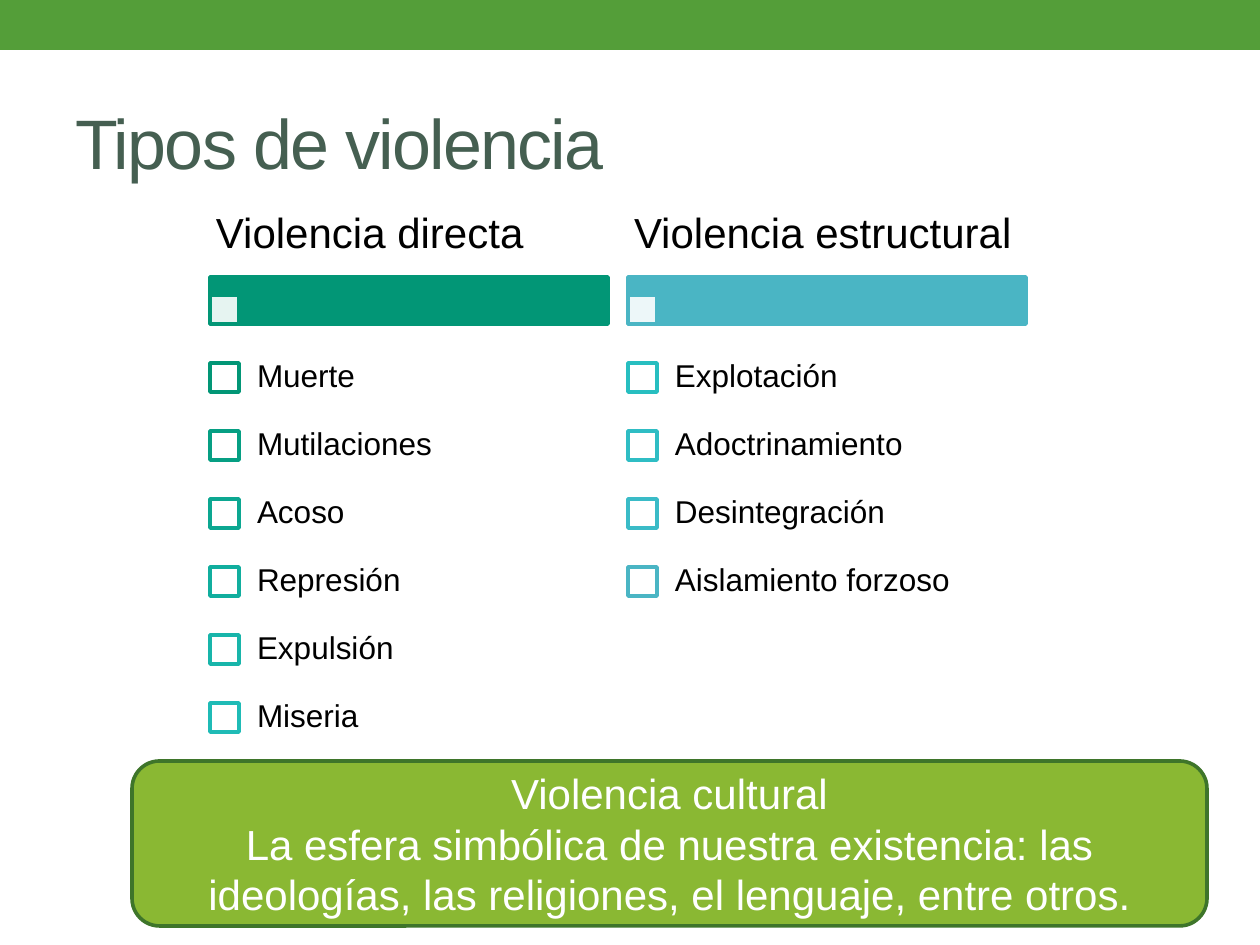
import pptx
import pptx.util
import pptx.dml.color
import pptx.enum.shapes
import pptx.enum.text
import pptx.oxml.ns
import lxml.etree

EMU_PER_PX = 914400 / 126
FONT = "Arial"
RECTANGLE = pptx.enum.shapes.MSO_SHAPE.RECTANGLE
ROUNDED = pptx.enum.shapes.MSO_SHAPE.ROUNDED_RECTANGLE
MIDDLE = pptx.enum.text.MSO_ANCHOR.MIDDLE
LEFT = pptx.enum.text.PP_ALIGN.LEFT
CENTER = pptx.enum.text.PP_ALIGN.CENTER

MARKER = 29
ROW_PITCH = 68

COLUMNS = [
    ("Violencia directa", "029676", [
        ("Muerte", "029676"),
        ("Mutilaciones", "069F83"),
        ("Acoso", "0CA791"),
        ("Represión", "11AE9E"),
        ("Expulsión", "18B5AA"),
        ("Miseria", "1FBBB6"),
    ]),
    ("Violencia estructural", "4AB5C4", [
        ("Explotación", "27BEC0"),
        ("Adoctrinamiento", "2FBDC4"),
        ("Desintegración", "3ABBC7"),
        ("Aislamiento forzoso", "4AB5C4"),
    ]),
]


def px(length):
    return pptx.util.Emu(round(length * EMU_PER_PX))


def box_of(*lengths):
    return [px(length) for length in lengths]


def color(value):
    return pptx.dml.color.RGBColor.from_string(value)


def add_box(slide, kind, box, fill, line=None):
    shape = slide.shapes.add_shape(kind, *box_of(*box))
    shape.shadow.inherit = False
    shape.fill.solid()
    shape.fill.fore_color.rgb = color(fill)
    if line:
        shape.line.color.rgb = color(line)
        shape.line.width = pptx.util.Pt(2.08)
    else:
        shape.line.fill.background()
    return shape


def set_opacity(shape, percent):
    tag = pptx.oxml.ns.qn("a:srgbClr")
    fill_color = next(shape.fill._xPr.iter(tag))
    alpha = lxml.etree.SubElement(fill_color, pptx.oxml.ns.qn("a:alpha"))
    alpha.set("val", str(percent * 1000))


def style_paragraph(paragraph, size, value, alignment=LEFT):
    paragraph.alignment = alignment
    paragraph.font.name = FONT
    paragraph.font.size = pptx.util.Pt(size)
    paragraph.font.color.rgb = color(value)


def add_label(slide, box, text, size, inset_x, inset_y):
    frame = slide.shapes.add_textbox(*box_of(*box)).text_frame
    frame.word_wrap = True
    frame.vertical_anchor = MIDDLE
    frame.margin_left = frame.margin_right = px(inset_x)
    frame.margin_top = frame.margin_bottom = px(inset_y)
    paragraph = frame.paragraphs[0]
    paragraph.text = text
    paragraph.line_spacing = 0.9
    style_paragraph(paragraph, size, "000000")


def add_title(slide, box, text):
    title = slide.shapes.title
    title.left, title.top, title.width, title.height = box_of(*box)
    title.text_frame.text = text
    title.text_frame.vertical_anchor = MIDDLE
    paragraph = title.text_frame.paragraphs[0]
    style_paragraph(paragraph, 40, "455F51")
    # Tighten the letters by one point
    paragraph.runs[0].font._element.set("spc", "-100")


def add_column(slide, box, heading, accent, items):
    left, top, width = box
    # Heading above its bar, with a pale square in the bar's corner
    add_box(slide, RECTANGLE, (left, top + 84, width, 47), accent, accent)
    square = add_box(slide, RECTANGLE, (left, top + 102, MARKER, MARKER), "FFFFFF", accent)
    set_opacity(square, 90)
    add_label(slide, (left, top, width, 84), heading, 24, 6, 4)
    # Items with check boxes
    for row, (text, outline) in enumerate(items):
        row_top = top + 150 + row * ROW_PITCH
        add_box(slide, RECTANGLE, (left, row_top + 20, MARKER, MARKER), "FFFFFF", outline)
        label_box = (left + MARKER, row_top, width - MARKER, ROW_PITCH)
        add_label(slide, label_box, text, 18, 18, 18)


def add_panel(slide, box, lines):
    panel = add_box(slide, ROUNDED, box, "8AB833", "3E752A")
    frame = panel.text_frame
    frame.word_wrap = True
    frame.vertical_anchor = MIDDLE
    frame.text = "\n".join(lines)
    for paragraph in frame.paragraphs:
        style_paragraph(paragraph, 24, "FFFFFF", CENTER)


def main():
    presentation = pptx.Presentation()
    presentation.slide_width, presentation.slide_height = box_of(1260, 945)
    slide = presentation.slides.add_slide(presentation.slide_layouts[5])

    # Top band and title
    add_box(slide, RECTANGLE, (0, 0, 1260, 50), "549E39")
    add_title(slide, (63, 73, 1134, 136), "Tipos de violencia")

    # The two lists
    for index, (heading, accent, items) in enumerate(COLUMNS):
        add_column(slide, (210 + index * 418, 193, 398), heading, accent, items)

    # Closing panel
    add_panel(slide, (132, 761, 1075, 165), [
        "Violencia cultural",
        "La esfera simbólica de nuestra existencia: las ideologías, "
        "las religiones, el lenguaje, entre otros.",
    ])

    presentation.save("out.pptx")


if __name__ == "__main__":
    main()
